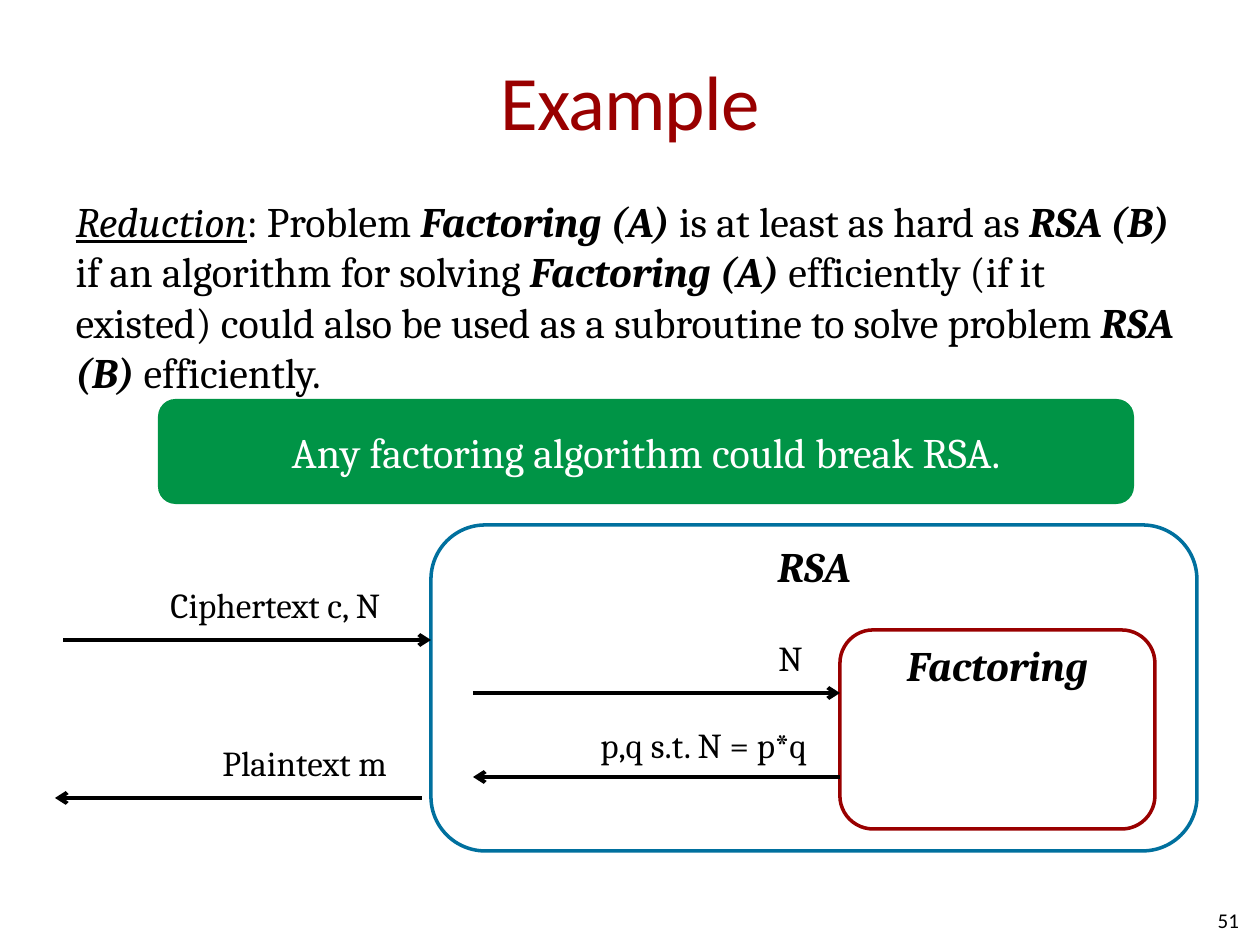
from dataclasses import dataclass

from lxml.etree import SubElement
from pptx import Presentation
from pptx.dml.color import RGBColor
from pptx.enum.shapes import MSO_CONNECTOR as Connector, MSO_SHAPE as Preset
from pptx.enum.text import MSO_ANCHOR as Anchor, MSO_AUTO_SIZE as AutoSize, PP_ALIGN as Align
from pptx.oxml.ns import qn
from pptx.util import Emu, Pt


@dataclass(frozen=True)
class Theme:
    black: str = "000000"
    white: str = "FFFFFF"
    red: str = "990000"
    blue: str = "00709E"
    green: str = "009446"
    heading: str = "Calibri"
    serif: str = "Cambria"
    title_size: int = 44
    body_size: int = 24
    label_size: int = 20
    number_size: int = 12
    outline: float = 2
    arrow: float = 2.25


THEME = Theme()
PX = 914400 / 126

TITLE = "Example"
TITLE_AT = (63, 21, 1134, 158)
REDUCTION = [
    ("Reduction", "iu"),
    (": Problem ", ""),
    ("Factoring (A)", "bi"),
    (" is at least as hard as ", ""),
    ("RSA (B)", "bi"),
    (" if an algorithm for solving ", ""),
    ("Factoring (A)", "bi"),
    (" efficiently (if it existed) could also be used as a subroutine to solve problem ", ""),
    ("RSA (B)", "bi"),
    (" efficiently.", ""),
]
REDUCTION_AT = (63, 189, 1134, 655)
PAGE_NUMBER = "51"
PAGE_NUMBER_AT = (945, 895, 294, 50)
CONCLUSION = "Any factoring algorithm could break RSA."
CONCLUSION_AT = (158, 399, 976, 105)
PROBLEMS = [
    ("Factoring", (840, 630, 315, 199), THEME.white, THEME.red),
    ("RSA", (431, 525, 766, 326), None, THEME.blue),
]
MESSAGES = [
    ("Ciphertext c, N", (158, 577), (63, 640), (431, 640)),
    ("N", (766, 630), (473, 693), (840, 693)),
    ("p,q s.t. N = p*q", (588, 717), (840, 777), (473, 777)),
    ("Plaintext m", (210, 735), (422, 798), (55, 798)),
]
LABEL_SIDE = 126


def px(*lengths):
    return [Emu(round(length * PX)) for length in lengths]


def color(value):
    return RGBColor.from_string(value)


def write(frame, text, *, size=THEME.body_size, font=THEME.serif, ink=THEME.black,
          align=Align.LEFT, anchor=Anchor.TOP, wrap=True, insets=None, before=0, tracking=None):
    frame.word_wrap = wrap
    frame.auto_size = AutoSize.NONE
    frame.vertical_anchor = anchor
    if insets is not None:
        (frame.margin_left, frame.margin_top,
         frame.margin_right, frame.margin_bottom) = px(*insets)
    para = frame.paragraphs[0]
    para.alignment = align
    para.space_before = Pt(before)
    for words, style in [(text, "")] if isinstance(text, str) else text:
        span = para.add_run()
        span.text = words
        span.font.name = font
        span.font.size = Pt(size)
        span.font.color.rgb = color(ink)
        span.font.bold = "b" in style
        span.font.italic = "i" in style
        span.font.underline = "u" in style
        if tracking is not None:
            span.font._element.set("spc", str(tracking))
    return para


def place(shape, at):
    shape.left, shape.top, shape.width, shape.height = px(*at)


def add_box(page, at, fill, line):
    box = page.shapes.add_shape(Preset.ROUNDED_RECTANGLE, *px(*at))
    box.shadow.inherit = False
    if fill:
        box.fill.solid()
        box.fill.fore_color.rgb = color(fill)
    else:
        box.fill.background()
    if line:
        box.line.color.rgb = color(line)
        box.line.width = Pt(THEME.outline)
    else:
        box.line.fill.background()
    return box


def add_arrow(page, start, end):
    arrow = page.shapes.add_connector(Connector.STRAIGHT, *px(*start, *end))
    arrow.line.color.rgb = color(THEME.black)
    arrow.line.width = Pt(THEME.arrow)
    SubElement(arrow.line._get_or_add_ln(), qn("a:tailEnd"), type="arrow")
    SubElement(arrow._element.spPr, qn("a:effectLst"))


def main():
    deck = Presentation()
    deck.slide_width, deck.slide_height = px(1260, 945)
    page = deck.slides.add_slide(deck.slide_layouts[1])

    title, body = page.placeholders
    place(title, TITLE_AT)
    write(title.text_frame, TITLE, size=THEME.title_size, font=THEME.heading, ink=THEME.red,
          align=Align.CENTER, anchor=Anchor.MIDDLE, insets=(0, 6, 0, 6), tracking=-50)
    place(body, REDUCTION_AT)
    para = write(body.text_frame, REDUCTION, before=0.2 * THEME.body_size)
    props = para._p.get_or_add_pPr()
    props.set("marL", "0")
    props.set("indent", "0")
    SubElement(props, qn("a:buNone"))

    number = page.shapes.add_textbox(*px(*PAGE_NUMBER_AT))
    write(number.text_frame, PAGE_NUMBER, size=THEME.number_size, font=THEME.heading,
          align=Align.RIGHT, anchor=Anchor.MIDDLE, insets=(0, 0, 0, 0))

    for name, at, fill, line in PROBLEMS:
        box = add_box(page, at, fill, line)
        write(box.text_frame, [(name, "bi")], align=Align.CENTER, insets=(0, 0, 0, 0))

    for text, corner, start, end in MESSAGES:
        add_arrow(page, start, end)
        label = page.shapes.add_textbox(*px(*corner, LABEL_SIDE, LABEL_SIDE))
        write(label.text_frame, text, size=THEME.label_size, wrap=False)

    banner = add_box(page, CONCLUSION_AT, THEME.green, None)
    write(banner.text_frame, CONCLUSION, ink=THEME.white, align=Align.CENTER,
          anchor=Anchor.MIDDLE, insets=(0, 13, 0, 13))

    deck.save("out.pptx")


if __name__ == "__main__":
    main()
